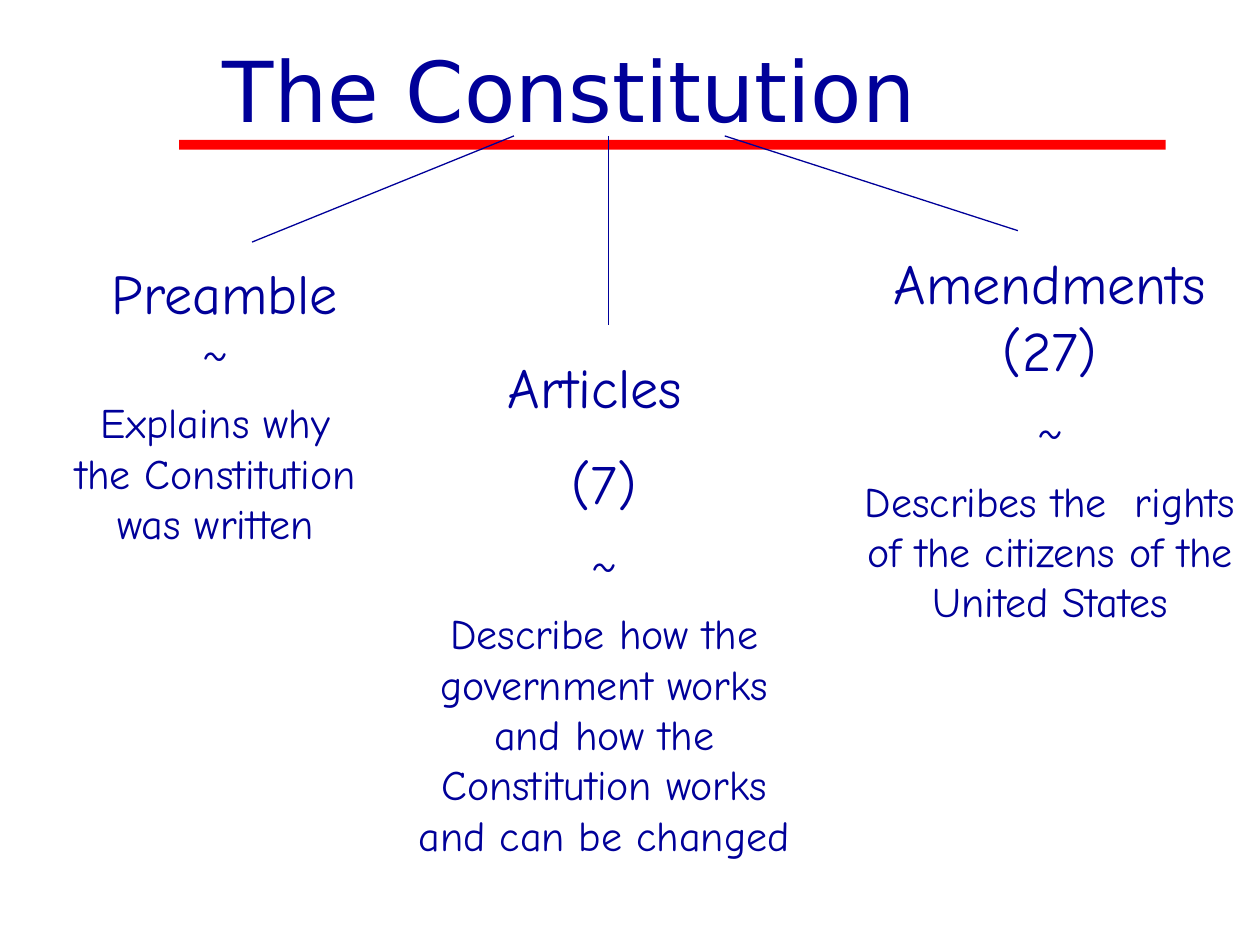
"""Build a slide that splits the Constitution into its three parts."""
from lxml import etree
from pptx import Presentation
from pptx.dml.color import RGBColor
from pptx.enum.shapes import MSO_CONNECTOR, MSO_SHAPE
from pptx.enum.text import MSO_ANCHOR, MSO_AUTO_SIZE, PP_ALIGN
from pptx.oxml.ns import qn
from pptx.util import Cm, Pt

LINE = MSO_CONNECTOR.STRAIGHT
RECT = MSO_SHAPE.RECTANGLE
TOP = MSO_ANCHOR.TOP
GROW = MSO_AUTO_SIZE.SHAPE_TO_FIT_TEXT
LEFT, MID = PP_ALIGN.LEFT, PP_ALIGN.CENTER

BLUE, RED, WHITE = "000099", "FF0000", "FFFFFF"
HEAD, BODY = 32, 24
LINE_TOP = 2.74

PARTS = [
    ((1.27, 5.08, 6.15, 7.19), WHITE, [
        [(" Preamble ", HEAD), ("~", BODY)],
        [("Explains why the Constitution was written", BODY)],
    ]),
    ((8.05, 6.99, 8.26, 16.84), None, [
        [("Articles ", HEAD)],
        [("(7)", HEAD)],
        [("~", BODY)],
        [("Describe how the government works and how the "
          "Constitution works and can be changed", BODY)],
    ]),
    ((16.94, 4.88, 8.46, 10.57), WHITE, [
        [("Amendments (27)", HEAD)],
        [("~", BODY)],
        [("Describes the  rights of the citizens of the United States", BODY)],
    ]),
]
LINES = [(10.36, 5.08, 4.88), (14.61, 20.52, 4.65), (12.27, 12.27, 6.55)]


def color(code):
    """Turn a hex string into a colour."""
    return RGBColor.from_string(code)


def style(para, size, face, align):
    """Set the font and alignment of a paragraph."""
    para.alignment = align
    font = para.font
    font.name, font.size = face, Pt(size)
    font.color.rgb = color(BLUE)


def set_frame(frame):
    """Wrap the text from the top and let the box grow."""
    frame.word_wrap = True
    frame.vertical_anchor = TOP
    frame.auto_size = GROW


def add_bar(slide, box):
    """Add the red rule below the title."""
    bar = slide.shapes.add_shape(RECT, *map(Cm, box))
    bar.shadow.inherit = False
    bar.fill.solid()
    bar.fill.fore_color.rgb = color(RED)
    bar.line.fill.background()


def set_title(slide, text, box):
    """Place and format the title."""
    title = slide.shapes.title
    title.left, title.top, title.width, title.height = map(Cm, box)
    title.text = text
    set_frame(title.text_frame)
    style(title.text_frame.paragraphs[0], 48, "DejaVu Sans", LEFT)


def add_part(slide, box, fill, paras):
    """Add one centred text block, spaced by half of each text size."""
    shape = slide.shapes.add_textbox(*map(Cm, box))
    if fill:
        shape.fill.solid()
        shape.fill.fore_color.rgb = color(fill)
    frame = shape.text_frame
    set_frame(frame)
    for num, runs in enumerate(paras):
        para = frame.add_paragraph() if num else frame.paragraphs[0]
        base = runs[0][1]
        style(para, base, "Comic Neue", MID)
        if num:
            para.space_before = Pt(base / 2)
        for text, size in runs:
            run = para.add_run()
            run.text = text
            if size != base:
                run.font.size = Pt(size)


def add_line(slide, start, end, low):
    """Add a thin line from the title down to a part."""
    line = slide.shapes.add_connector(
        LINE, Cm(start), Cm(LINE_TOP), Cm(end), Cm(low))
    line.line.color.rgb = color(BLUE)
    line.line.width = Pt(0.75)
    etree.SubElement(line._element.spPr, qn("a:effectLst"))


def main():
    """Build and save the slide."""
    deck = Presentation()
    deck.slide_width, deck.slide_height = Cm(25.4), Cm(19.05)
    slide = deck.slides.add_slide(deck.slide_layouts[5])
    add_bar(slide, (3.61, 2.82, 19.89, 0.2))
    set_title(slide, "The Constitution", (4.24, 0.64, 16.31, 2.29))
    for part in PARTS:
        add_part(slide, *part)
    for line in LINES:
        add_line(slide, *line)
    deck.save("out.pptx")


if __name__ == "__main__":
    main()
